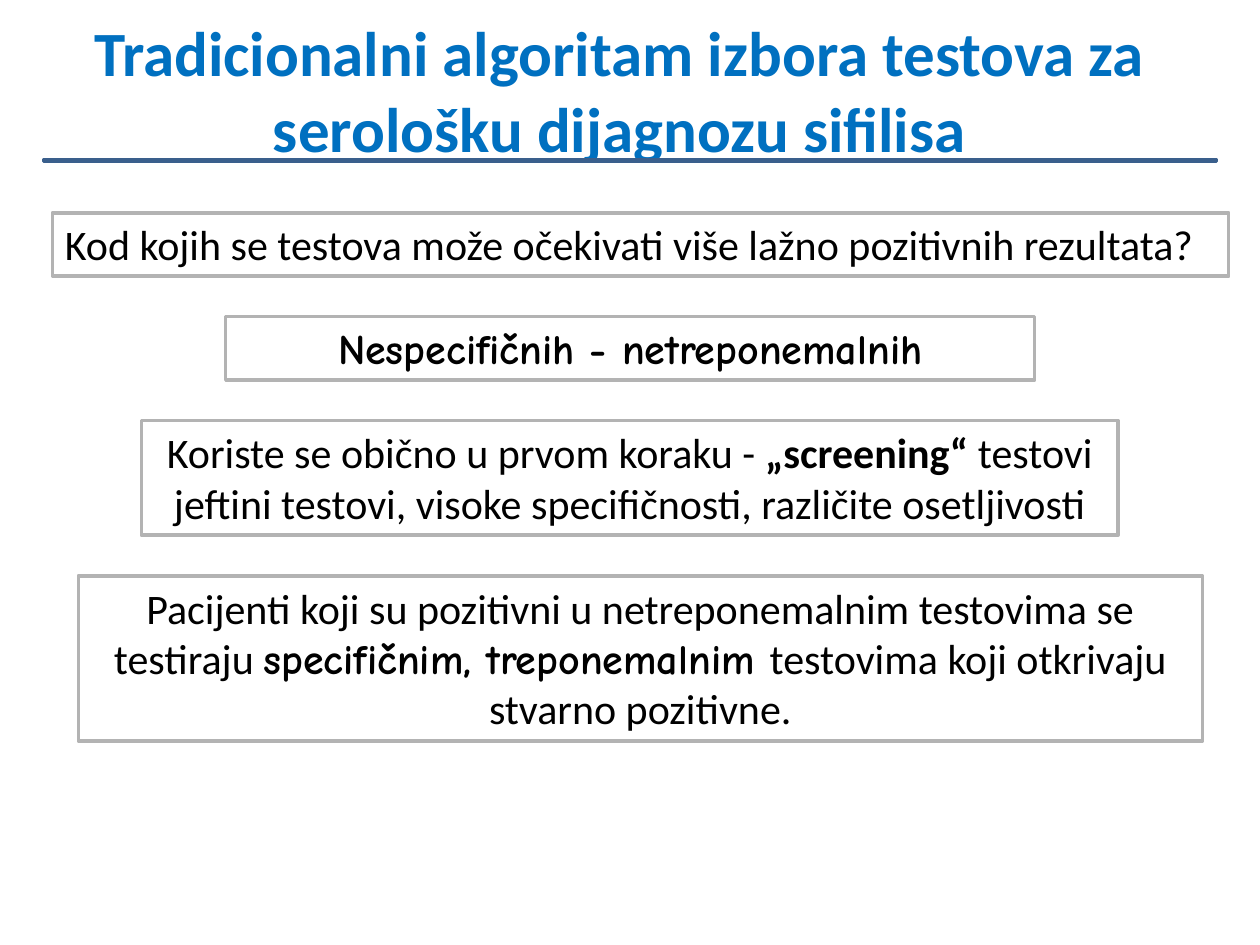
import pptx
import pptx.dml.color
import pptx.enum.shapes
import pptx.enum.text
import pptx.util

Cm = pptx.util.Cm
Pt = pptx.util.Pt
RGBColor = pptx.dml.color.RGBColor
Align = pptx.enum.text.PP_ALIGN
Shape = pptx.enum.shapes.MSO_SHAPE

TITLE_BLUE = RGBColor(0x00, 0x70, 0xC0)
RULE_FILL = RGBColor(0x4F, 0x81, 0xBD)
RULE_LINE = RGBColor(0x3A, 0x5F, 0x8C)
BORDER_GREY = RGBColor(0xB3, 0xB3, 0xB3)
BLACK = RGBColor(0x00, 0x00, 0x00)
BODY_FONT = "Calibri"
ACCENT_FONT = "Comic Neue"


def format_font(font, name, size, color, bold):
    font.name = name
    font.size = Pt(size)
    font.color.rgb = color
    font.bold = bold


deck = pptx.Presentation()
deck.slide_width = Cm(25.4)
deck.slide_height = Cm(19.05)
page = deck.slides.add_slide(deck.slide_layouts[5])

title = page.shapes.title
title.left, title.top, title.width, title.height = Cm(1.06), Cm(0.21), Cm(22.86), Cm(3.18)
title.text_frame.text = "Tradicionalni algoritam izbora testova za serološku dijagnozu sifilisa"
title.text_frame.auto_size = pptx.enum.text.MSO_AUTO_SIZE.NONE
title.text_frame.vertical_anchor = pptx.enum.text.MSO_ANCHOR.MIDDLE
title_para = title.text_frame.paragraphs[0]
title_para.alignment = Align.CENTER
format_font(title_para.runs[0].font, BODY_FONT, 36, TITLE_BLUE, True)

rule = page.shapes.add_shape(Shape.MATH_MINUS, Cm(-3.39), Cm(3.18), Cm(32.18), Cm(0.13))
rule.shadow.inherit = False
rule.fill.solid()
rule.fill.fore_color.rgb = RULE_FILL
rule.line.color.rgb = RULE_LINE
rule.line.width = Pt(2)

statements = [
    (1.06, 4.29, 23.71, 1.28, Align.LEFT, [
        [("Kod kojih se testova može očekivati više lažno pozitivnih rezultata?", BODY_FONT, False)],
    ]),
    (4.55, 6.38, 16.31, 1.28, Align.CENTER, [
        [("Nespecifičnih - netreponemalnih", ACCENT_FONT, True)],
    ]),
    (2.85, 8.48, 19.69, 2.31, Align.CENTER, [
        [("Koriste se obično u prvom koraku - ", BODY_FONT, False),
         ("„screening“ ", BODY_FONT, True),
         ("testovi", BODY_FONT, False)],
        [("jeftini testovi, visoke specifičnosti, različite osetljivosti", BODY_FONT, False)],
    ]),
    (1.58, 11.61, 22.66, 3.33, Align.CENTER, [
        [("Pacijenti koji su pozitivni u netreponemalnim testovima se testiraju ", BODY_FONT, False),
         ("specifičnim, treponemalnim ", ACCENT_FONT, True),
         ("testovima koji otkrivaju stvarno pozitivne.", BODY_FONT, False)],
    ]),
]

for left, top, width, height, alignment, lines in statements:
    box = page.shapes.add_shape(Shape.RECTANGLE, Cm(left), Cm(top), Cm(width), Cm(height))
    box.shadow.inherit = False
    box.fill.background()
    box.line.color.rgb = BORDER_GREY
    box.line.width = Pt(2)
    frame = box.text_frame
    frame.word_wrap = True
    frame.auto_size = pptx.enum.text.MSO_AUTO_SIZE.SHAPE_TO_FIT_TEXT
    frame.vertical_anchor = pptx.enum.text.MSO_ANCHOR.TOP
    for index, line in enumerate(lines):
        para = frame.add_paragraph() if index else frame.paragraphs[0]
        para.alignment = alignment
        for text, font_name, bold in line:
            span = para.add_run()
            span.text = text
            format_font(span.font, font_name, 24, BLACK, bold)

deck.save("out.pptx")
